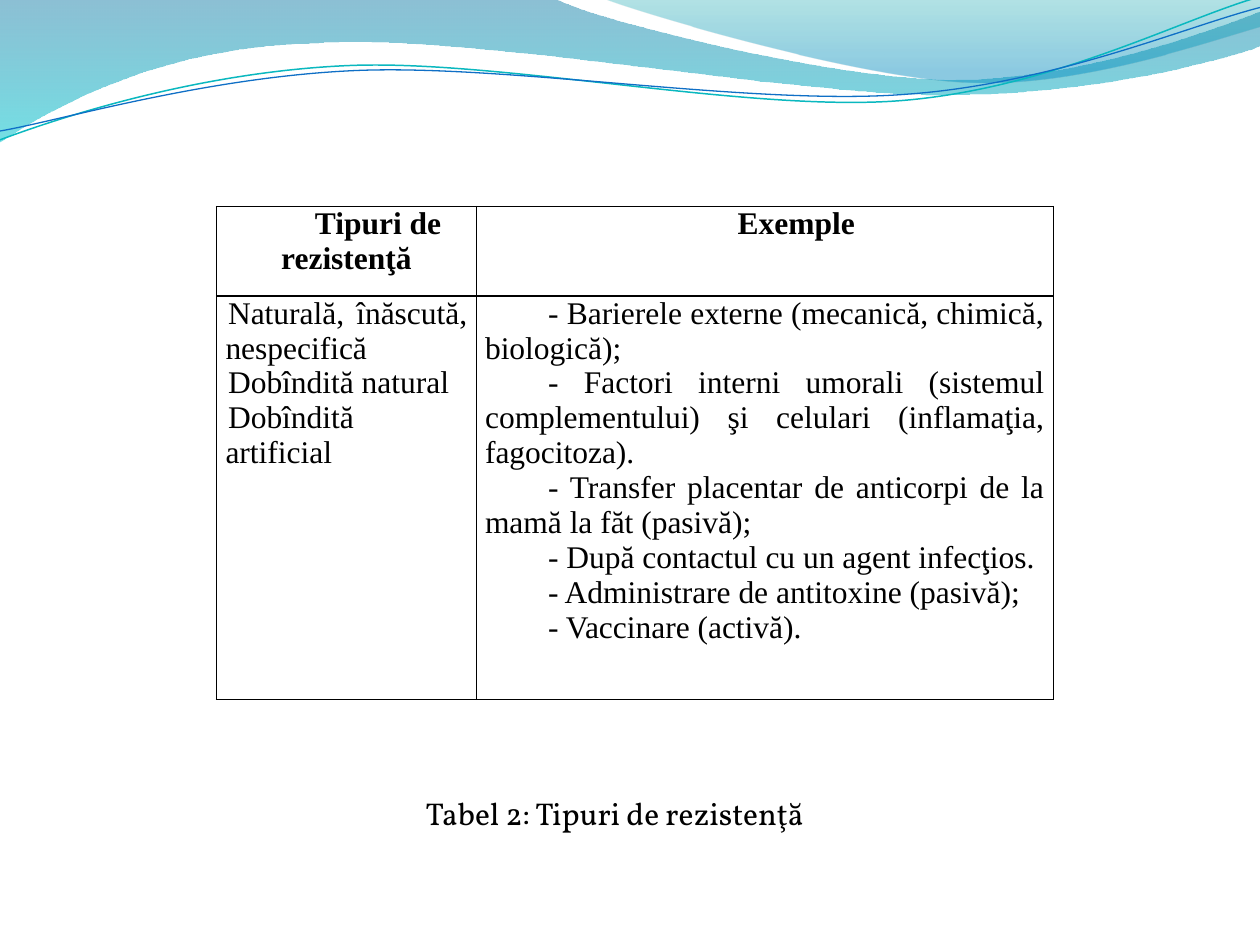
from math import cos, radians, sin

from lxml.etree import SubElement
from pptx import Presentation
from pptx.dml.color import RGBColor
from pptx.enum.text import PP_ALIGN
from pptx.oxml.ns import qn
from pptx.util import Inches, Pt

HEADINGS = ["Tipuri de rezistenţă", "Exemple"]
TYPES = [
    "Naturală, înăscută, nespecifică",
    "Dobîndită natural",
    "Dobîndită artificial",
]
EXAMPLES = [
    "- Barierele externe (mecanică, chimică, biologică);",
    "- Factori interni umorali (sistemul complementului) şi celulari (inflamaţia, fagocitoza).",
    "- Transfer placentar de anticorpi de la mamă la făt (pasivă);",
    "- După contactul cu un agent infecţios.",
    "- Administrare de antitoxine (pasivă);",
    "- Vaccinare (activă).",
]
CAPTION = "Tabel 2: Tipuri de rezistenţă"

COLUMN_WIDTHS = [2.06, 4.58]
ROW_HEIGHTS = [0.71, 3.2]
HEADING_FORMAT = {"alignment": PP_ALIGN.CENTER, "bold": True}
BODY_FORMAT = {"alignment": PP_ALIGN.JUSTIFY, "bold": False}
ROWS = [
    [([heading], 0.5, HEADING_FORMAT) for heading in HEADINGS],
    [(TYPES, 0.02, BODY_FORMAT), (EXAMPLES, 0.5, BODY_FORMAT)],
]
CELL_MARGINS = {
    "margin_left": Inches(0.07),
    "margin_right": Inches(0.07),
    "margin_top": 0,
    "margin_bottom": 0,
}

BANDS = [
    {
        "path": [
            (0, 0), (4.4, -0.01),
            (4.76, 0.17, 6.64, 0.63, 7.58, 0.63),
            (8.53, 0.63, 9.58, 0.26, 10, 0.09),
            (10.01, 0.36),
            (9.83, 0.44, 8.7, 0.76, 7.46, 0.75),
            (6.22, 0.75, 3.82, 0.28, 2.57, 0.34),
            (1.29, 0.36, 0.46, 0.83, -0.01, 1.13),
            (0, 0),
        ],
        "stops": [(0, "0074A1", 45), (1, "00C6CF", 55)],
    },
    {
        "path": [
            (4.79, -0.01),
            (5.09, 0.11, 6.82, 0.62, 7.69, 0.65),
            (8.56, 0.69, 9.61, 0.32, 10, 0.21),
            (10, 0), (4.79, -0.01),
        ],
        "stops": [(0, "00A1A9", 30), (0.8, "008BBF", 45)],
    },
]
WAVE_ROTATION = -2.7
WAVES = [
    {
        "path": [
            (0, 1.11),
            (0.48, 0.93, 1.58, 0.57, 2.77, 0.52),
            (3.95, 0.47, 5.93, 0.89, 7.13, 0.8),
            (8.33, 0.71, 9.38, 0.15, 9.98, -0.02),
        ],
        "center": (4.99, 0.58),
        "color": "0AB8BF",
        "width": 0.85,
    },
    {
        "path": [
            (0, 1.04),
            (0.47, 0.96, 1.64, 0.61, 2.83, 0.56),
            (4.03, 0.51, 5.97, 0.84, 7.17, 0.75),
            (8.36, 0.67, 9.41, 0.21, 10, 0.06),
        ],
        "center": (5, 0.59),
        "color": "0F6FC6",
        "width": 0.75,
    },
]


def rgb(value):
    return RGBColor.from_string(value)


def apply(target, values):
    for name, value in values.items():
        setattr(target, name, value)


def pairs(segment):
    return list(zip(segment[::2], segment[1::2]))


def turn(segment, center, degrees):
    angle = radians(degrees)
    turned = []
    for x, y in pairs(segment):
        dx, dy = x - center[0], y - center[1]
        turned += [
            center[0] + dx * cos(angle) - dy * sin(angle),
            center[1] + dx * sin(angle) + dy * cos(angle),
        ]
    return turned


def add_outline(slide, path, close):
    start, *points = [
        (Inches(x), Inches(y)) for segment in path for x, y in pairs(segment)
    ]
    builder = slide.shapes.build_freeform(*start)
    builder.add_line_segments(points, close=close)
    outline = builder.convert_to_shape()
    outline.shadow.inherit = False
    steps = iter(list(outline.element.iter(qn("a:lnTo"))))
    for segment in path[1:]:
        first, *others = [next(steps) for _ in pairs(segment)]
        if others:
            first.tag = qn("a:cubicBezTo")
            for other in others:
                first.append(other[0])
                other.getparent().remove(other)
    return outline


def add_band(slide, path, stops):
    band = add_outline(slide, path, True)
    band.line.fill.background()
    band.fill.gradient()
    band.fill.gradient_angle = 270
    for stop, (position, color, _) in zip(band.fill.gradient_stops, stops):
        stop.position = position
        stop.color.rgb = rgb(color)
    colors = band.element.spPr.iter(qn("a:srgbClr"))
    for node, (_, _, opacity) in zip(colors, stops):
        SubElement(node, qn("a:alpha")).set("val", str(opacity * 1000))


def add_wave(slide, path, center, color, width):
    level_path = [turn(segment, center, -WAVE_ROTATION) for segment in path]
    wave = add_outline(slide, level_path, False)
    wave.rotation = WAVE_ROTATION
    wave.fill.background()
    wave.line.color.rgb = rgb(color)
    wave.line.width = Pt(width)


def write(paragraph, text, font_name, bold=False):
    run = paragraph.add_run()
    run.text = text
    apply(run.font, {"name": font_name, "size": Pt(18), "bold": bold})
    run.font.color.rgb = rgb("000000")


def add_borders(cell):
    properties = cell._tc.get_or_add_tcPr()
    for side in ("lnL", "lnR", "lnT", "lnB"):
        border = SubElement(properties, qn(f"a:{side}"), w=str(Pt(1)))
        fill = SubElement(border, qn("a:solidFill"))
        SubElement(fill, qn("a:srgbClr"), val="000000")


def fill_cell(cell, texts, indent, style):
    apply(cell, CELL_MARGINS)
    add_borders(cell)
    cell.fill.background()
    frame = cell.text_frame
    for index, text in enumerate(texts):
        paragraph = frame.add_paragraph() if index else frame.paragraphs[0]
        paragraph.alignment = style["alignment"]
        properties = paragraph._p.get_or_add_pPr()
        properties.set("marL", "0")
        properties.set("indent", str(Inches(indent)))
        write(paragraph, text, "Times New Roman", style["bold"])


def add_resistance_table(slide):
    table = slide.shapes.add_table(
        len(ROWS), len(COLUMN_WIDTHS), Inches(1.72), Inches(1.64),
        Inches(sum(COLUMN_WIDTHS)), Inches(sum(ROW_HEIGHTS)),
    ).table
    apply(table, {"first_row": False, "horz_banding": False})
    for column, width in zip(table.columns, COLUMN_WIDTHS):
        column.width = Inches(width)
    for row, height, contents in zip(table.rows, ROW_HEIGHTS, ROWS):
        row.height = Inches(height)
        for cell, content in zip(row.cells, contents):
            fill_cell(cell, *content)


def main():
    deck = Presentation()
    apply(deck, {"slide_width": Inches(10), "slide_height": Inches(7.5)})
    slide = deck.slides.add_slide(deck.slide_layouts[6])
    for band in BANDS:
        add_band(slide, **band)
    for wave in WAVES:
        add_wave(slide, **wave)
    add_resistance_table(slide)
    caption = slide.shapes.add_textbox(
        Inches(3.28), Inches(6.25), Inches(3.44), Inches(0.4)
    ).text_frame
    caption.word_wrap = True
    write(caption.paragraphs[0], CAPTION, "Vollkorn")
    deck.save("out.pptx")


if __name__ == "__main__":
    main()
